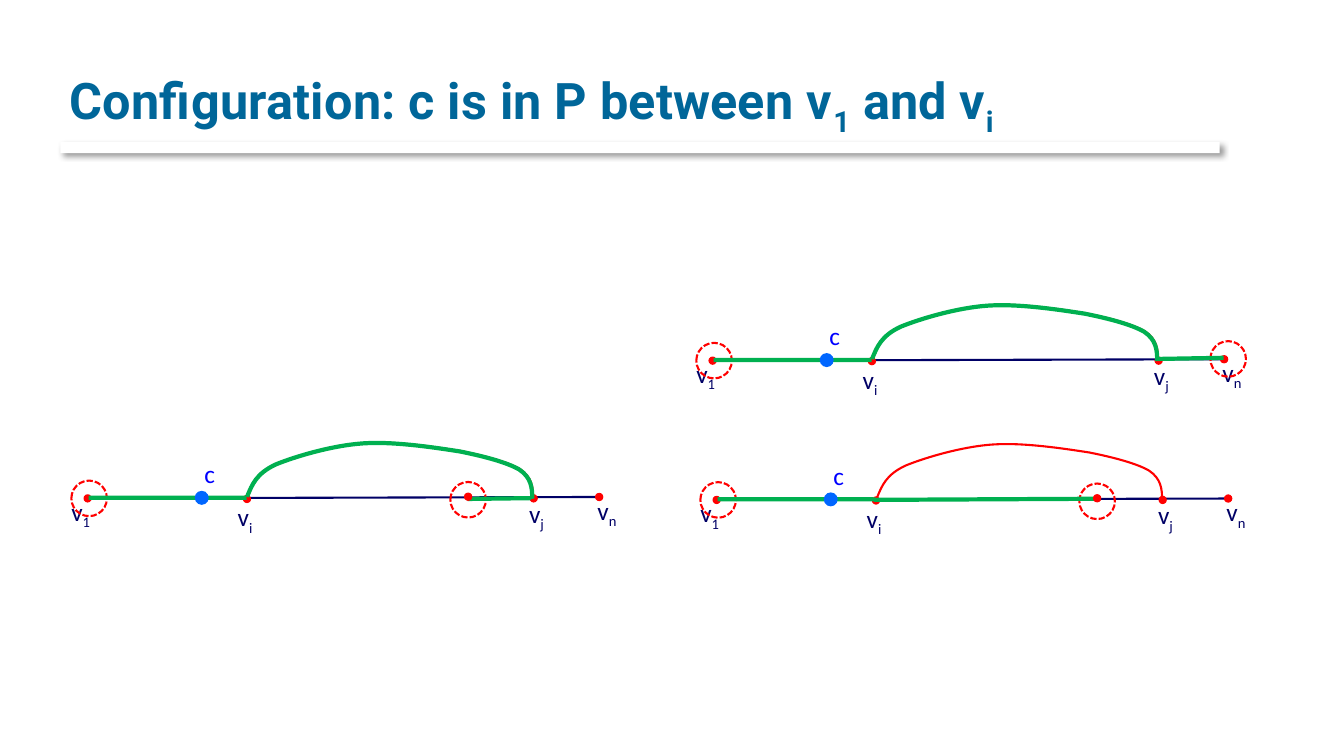
"""Build the slide on configurations with c between v1 and vi."""
from dataclasses import dataclass

from lxml.etree import SubElement
from pptx import Presentation
from pptx.dml.color import RGBColor
from pptx.enum.dml import MSO_LINE
from pptx.enum.shapes import MSO_CONNECTOR, MSO_SHAPE
from pptx.enum.text import MSO_ANCHOR, MSO_AUTO_SIZE, PP_ALIGN
from pptx.oxml.ns import qn
from pptx.util import Pt


@dataclass(frozen=True)
class Theme:
    """Colours, fonts, type sizes and line widths."""
    title: str = "006699"
    navy: str = "000066"
    red: str = "FF0000"
    green: str = "00B050"
    dot: str = "0066FF"
    blue: str = "0000FF"
    white: str = "FFFFFF"
    head: str = "Roboto"
    body: str = "Calibri"
    big: float = 36
    small: float = 18
    thin: float = 1.5
    thick: float = 3


THEME = Theme()
TITLE = [("Configuration: c is in P between v", 0), ("1", 1), (" and v", 0), ("i", 1)]
LABELS = [
    ("n", 357.1, -5.8, 28.8),
    ("1", -18.7, -5.1, 28.8),
    ("i", 100.1, -1.2, 25.2),
    ("j", 308.2, -3.8, 25.2),
]
NODES = [(365.4, -1), (0, 0), (113.8, 0.4), (318.6, 0)]
STEM = [(0.7, -0.5), (113.6, -0.4)]
ARC = [
    (114.5, -1.4), (118, -10), (121, -18), (135, -24.5),
    (149, -30.2), (175.7, -38.2), (198, -39.6),
    (219.6, -41), (247.7, -36.7), (266.4, -33.8),
    (284.4, -30.2), (300.2, -25.9), (308.9, -20.9),
    (317.5, -15.1), (318.2, -7.9), (318.2, 0),
]
PANELS = [
    dict(left=509, base=257.6, arc=True, ring=(368.3, -1.2),
         tail=[(319, -1.2), (365, -2)], mid=False),
    dict(left=62.6, base=356, arc=True, ring=(271.8, 1),
         tail=[(271.4, 0.4), (316.8, -0.2)], mid=True),
    dict(left=511.9, base=357.1, arc=False, ring=(271.8, 1),
         tail=[(112.3, 0), (270.7, -0.8)], mid=True),
]
NODE, STOP, RING = 5.2, 10, 25.4

deck = Presentation()
deck.slide_width, deck.slide_height = Pt(960), Pt(540)
slide = deck.slides.add_slide(deck.slide_layouts[5])
shapes = slide.shapes


def paint(hue):
    return RGBColor.from_string(hue)


def write(frame, runs, *, font=THEME.body, size=THEME.small, hue=THEME.navy,
          bold=False, gap=0):
    para = frame.paragraphs[0]
    para.alignment = PP_ALIGN.LEFT
    for text, sub in runs:
        run = para.add_run()
        run.text = text
        run.font.name, run.font.size, run.font.bold = font, Pt(size), bold
        run.font.color.rgb = paint(hue)
        if gap:
            run.font._element.set("spc", str(gap))
        if sub:
            run.font._element.set("baseline", "-25000")


def label(runs, x, y, wide, **style):
    frame = shapes.add_textbox(Pt(x), Pt(y), Pt(wide), Pt(29.1)).text_frame
    frame.word_wrap = False
    frame.auto_size = MSO_AUTO_SIZE.SHAPE_TO_FIT_TEXT
    write(frame, runs, **style)


def circle(x, y, size, *, fill=None, line=None, width=0.75, dash=None):
    oval = shapes.add_shape(
        MSO_SHAPE.OVAL, Pt(x - size / 2), Pt(y - size / 2), Pt(size), Pt(size))
    oval.shadow.inherit = False
    if fill:
        oval.fill.solid()
        oval.fill.fore_color.rgb = paint(fill)
    else:
        oval.fill.background()
    if line:
        oval.line.color.rgb = paint(line)
        oval.line.width = Pt(width)
        oval.line.dash_style = dash
    else:
        oval.line.fill.background()


def link(x1, y1, x2, y2, hue, width):
    line = shapes.add_connector(MSO_CONNECTOR.STRAIGHT, Pt(x1), Pt(y1), Pt(x2), Pt(y2))
    line.line.color.rgb = paint(hue)
    line.line.width = Pt(width)
    SubElement(line._element.spPr, qn("a:effectLst"))


def trace(x, y, spots, hue, width, curved=False):
    pts = [(Pt(x + dx), Pt(y + dy)) for dx, dy in spots]
    pen = shapes.build_freeform(*pts[0])
    pen.add_line_segments(pts[1:], close=False)
    shape = pen.convert_to_shape()
    shape.shadow.inherit = False
    shape.fill.background()
    shape.line.color.rgb = paint(hue)
    shape.line.width = Pt(width)
    if curved:
        legs = list(shape._element.iter(qn("a:lnTo")))
        track = legs[0].getparent()
        for i in range(0, len(legs), 3):
            cubic = SubElement(track, qn("a:cubicBezTo"))
            for leg in legs[i:i + 3]:
                cubic.append(leg[0])
                track.remove(leg)


def rule():
    bar = shapes.add_shape(MSO_SHAPE.RECTANGLE, Pt(43.2), Pt(101.5), Pt(828), Pt(7.9))
    bar.fill.solid()
    bar.fill.fore_color.rgb = paint(THEME.white)
    bar.line.fill.background()
    bar.shadow.inherit = False
    glow = SubElement(
        bar._element.spPr.find(qn("a:effectLst")), qn("a:outerShdw"),
        blurRad=str(Pt(4)), dist=str(Pt(3)), dir="2700000", algn="tl", rotWithShape="0")
    tint = SubElement(glow, qn("a:srgbClr"), val="000000")
    SubElement(tint, qn("a:alpha"), val="40000")


def panel(left, base, arc, ring, tail, mid):
    link(left, base, left + 365.8, base - 1, THEME.navy, THEME.thin)
    for dx, dy in NODES:
        circle(left + dx, base + dy, NODE, fill=THEME.red, line=THEME.red)
    for sub, dx, dy, wide in LABELS:
        label([("v", 0), (sub, 1)], left + dx, base + dy, wide)
    label([("c", 0)], left + 76.3, base - 32.2, 22.3, hue=THEME.blue)
    trace(left, base, ARC, THEME.red, THEME.thin, curved=True)
    for dx, dy in ((1.1, 0), ring):
        circle(left + dx, base + dy, RING, line=THEME.red, width=THEME.thin,
               dash=MSO_LINE.SQUARE_DOT)
    if arc:
        trace(left - 0.6, base + 0.3, ARC, THEME.green, THEME.thick, curved=True)
    trace(left, base, STEM, THEME.green, THEME.thick)
    circle(left + 81.5, base - 0.4, STOP, fill=THEME.dot)
    trace(left, base, tail, THEME.green, THEME.thick)
    if mid:
        circle(left + 271.8, base - 1.2, NODE, fill=THEME.red, line=THEME.red)


head = shapes.title
head.left, head.top, head.width, head.height = Pt(42.5), Pt(12.2), Pt(815.8), Pt(90)
head.text_frame.vertical_anchor = MSO_ANCHOR.BOTTOM
write(head.text_frame, TITLE, font=THEME.head, size=THEME.big, hue=THEME.title,
      bold=True, gap=15)
rule()
for item in PANELS:
    panel(**item)
deck.save("out.pptx")
